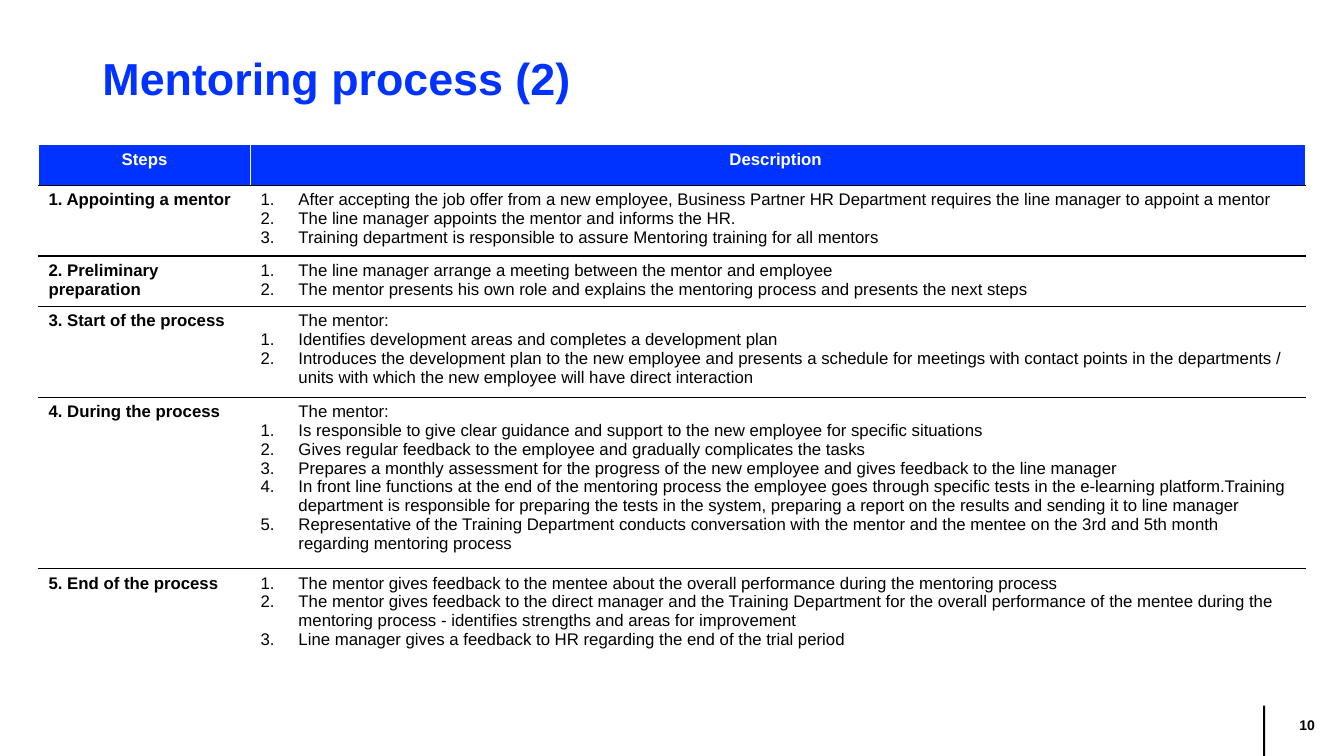
from dataclasses import dataclass

from lxml import etree
from pptx import Presentation
from pptx.dml.color import RGBColor
from pptx.enum import shapes, text
from pptx.oxml import ns
from pptx.util import Pt


@dataclass(frozen=True)
class Theme:
    font: str = "Arial"
    blue: RGBColor = RGBColor(0x00, 0x33, 0xFF)
    black: RGBColor = RGBColor(0x00, 0x00, 0x00)
    white: RGBColor = RGBColor(0xFF, 0xFF, 0xFF)
    title: int = 32
    body: int = 12
    number: int = 10


T = Theme()
INDENT = Pt(27)
MENTOR = "The mentor:"
STEPS = [
    ("1. Appointing a mentor", [
        "After accepting the job offer from a new employee, Business Partner HR Department requires the line manager to appoint a mentor",
        "The line manager appoints the mentor and informs the HR.",
        "Training department is responsible to assure Mentoring training for all mentors",
    ]),
    ("2. Preliminary preparation", [
        "The line manager arrange a meeting between the mentor and employee",
        "The mentor presents his own role and explains the mentoring process and presents the next steps",
    ]),
    ("3. Start of the process", [
        MENTOR,
        "Identifies development areas and completes a development plan",
        "Introduces the development plan to the new employee and presents a schedule for meetings with contact points in the departments / units with which the new employee will have direct interaction",
    ]),
    ("4. During the process", [
        MENTOR,
        "Is responsible to give clear guidance and support to the new employee for specific situations",
        "Gives regular feedback to the employee and gradually complicates the tasks",
        "Prepares a monthly assessment for the progress of the new employee and gives feedback to the line manager",
        "In front line functions at the end of the mentoring process the employee goes through specific tests in the e-learning platform.Training department is responsible for preparing the tests in the system, preparing a report on the results and sending it to line manager",
        "Representative of the Training Department conducts conversation with the mentor and the mentee on the 3rd and 5th month regarding mentoring process",
    ]),
    ("5. End of the process", [
        "The mentor gives feedback to the mentee about the overall performance during the mentoring process",
        "The mentor gives feedback to the direct manager and the Training Department for the overall performance of the mentee during the mentoring process - identifies strengths and areas for improvement",
        "Line manager gives a feedback to HR regarding the end of the trial period",
    ]),
]


def write(p, words, size, color, bold=True, align=text.PP_ALIGN.LEFT):
    p.alignment = align
    r = p.add_run()
    r.text = words
    r.font.color.rgb = color
    for key, value in dict(name=T.font, size=Pt(size), bold=bold).items():
        setattr(r.font, key, value)
    end = etree.SubElement(p._p, ns.qn("a:endParaRPr"), sz=str(size * 100))
    etree.SubElement(end, ns.qn("a:latin"), typeface=T.font)


def set_borders(cell, top, bottom):
    tc_pr = cell._tc.get_or_add_tcPr()
    sides = [("L", T.white), ("R", T.white), ("T", top), ("B", bottom)]
    for i, (side, color) in enumerate(sides):
        ln = etree.Element(ns.qn(f"a:ln{side}"), w=str(Pt(1)))
        fill = etree.SubElement(ln, ns.qn("a:solidFill"))
        etree.SubElement(fill, ns.qn("a:srgbClr"), val=str(color))
        tc_pr.insert(i, ln)


prs = Presentation()
prs.slide_width, prs.slide_height = Pt(960), Pt(540)
s = prs.slides.add_slide(prs.slide_layouts[5])

bar = s.shapes.add_shape(shapes.MSO_SHAPE.RECTANGLE, Pt(902.2), Pt(504), Pt(1.5), Pt(36))
bar.shadow.inherit = False
bar.fill.solid()
bar.fill.fore_color.rgb = T.black
bar.line.fill.background()

title = s.shapes.title
box = dict(left=Pt(66), top=Pt(29), width=Pt(828), height=Pt(58))
for key, value in box.items():
    setattr(title, key, value)
title.text_frame.vertical_anchor = text.MSO_ANCHOR.MIDDLE
p = title.text_frame.paragraphs[0]
p.line_spacing = 0.9
write(p, "Mentoring process (2)", T.title, T.blue)

number = s.shapes.add_textbox(Pt(730.3), Pt(503.5), Pt(216), Pt(29))
number.text_frame.word_wrap = True
number.text_frame.vertical_anchor = text.MSO_ANCHOR.MIDDLE
write(number.text_frame.paragraphs[0], "10", T.number, T.black, align=text.PP_ALIGN.RIGHT)

rows = len(STEPS) + 1
row_height = Pt(29)
table = s.shapes.add_table(rows, 2, Pt(27.5), Pt(103.5), Pt(905), row_height * rows).table
table.horz_banding = False
for column, width in zip(table.columns, (151.5, 753.5)):
    column.width = Pt(width)
for row in table.rows:
    row.height = row_height

for col, heading in enumerate(("Steps", "Description ")):
    cell = table.cell(0, col)
    cell.fill.solid()
    cell.fill.fore_color.rgb = T.blue
    set_borders(cell, T.white, T.black)
    write(cell.text_frame.paragraphs[0], heading, T.body, T.white, align=text.PP_ALIGN.CENTER)

for row, (step, actions) in enumerate(STEPS, 1):
    step_cell, action_cell = table.cell(row, 0), table.cell(row, 1)
    for cell in (step_cell, action_cell):
        cell.fill.background()
        set_borders(cell, T.black, T.white if row == len(STEPS) else T.black)
    write(step_cell.text_frame.paragraphs[0], step, T.body, T.black)
    tf = action_cell.text_frame
    for i, action in enumerate(actions):
        p = tf.paragraphs[0] if i == 0 else tf.add_paragraph()
        p_pr = p._p.get_or_add_pPr()
        p_pr.set("marL", str(INDENT))
        if action != MENTOR:
            p_pr.set("indent", str(-INDENT))
            etree.SubElement(p_pr, ns.qn("a:buFont"), typeface=T.font)
            etree.SubElement(p_pr, ns.qn("a:buAutoNum"), type="arabicPeriod")
        write(p, action, T.body, T.black, bold=False)

prs.save("out.pptx")
